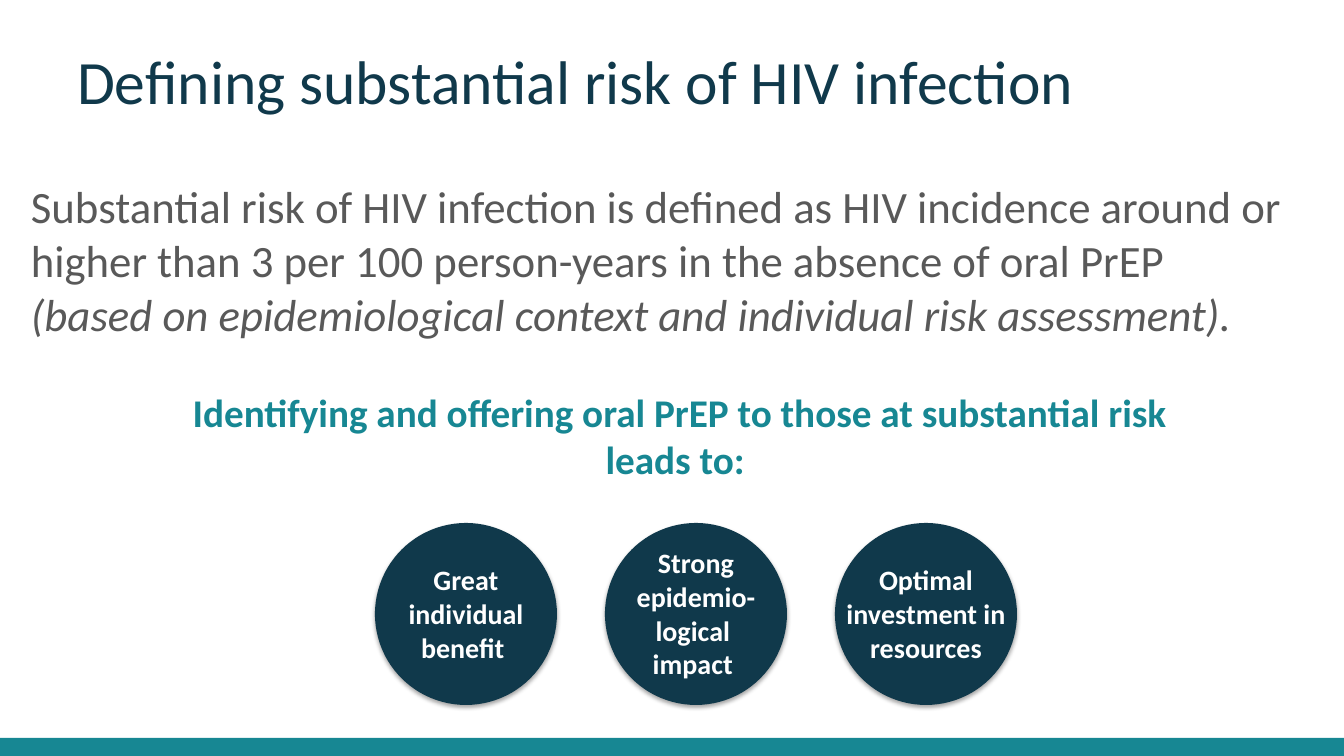
from pptx import Presentation
from pptx.dml.color import RGBColor
from pptx.enum.shapes import MSO_SHAPE
from pptx.enum.text import MSO_ANCHOR, MSO_AUTO_SIZE, PP_ALIGN
from pptx.oxml import parse_xml
from pptx.oxml.ns import nsdecls
from pptx.util import Pt

RECT, OVAL = MSO_SHAPE.RECTANGLE, MSO_SHAPE.OVAL
LEFT, CENTER = PP_ALIGN.LEFT, PP_ALIGN.CENTER
TOP, GROW, FIXED = MSO_ANCHOR.TOP, MSO_AUTO_SIZE.SHAPE_TO_FIT_TEXT, MSO_AUTO_SIZE.NONE

# Content
TITLE = "Defining substantial risk of HIV infection"
RISK = ("Substantial risk of HIV infection is defined as HIV incidence around or "
        "higher than 3 per 100 person-years in the absence of oral PrEP ")
BASIS = "(based on epidemiological context and individual risk assessment)."
LEAD = "Identifying and offering oral PrEP to those at substantial risk leads to: "
GAINS = [  # label, number of lines
    ("Great individual benefit ", 3),
    ("Strong epidemio-logical \vimpact ", 4),
    ("Optimal investment in resources", 3),
]

# Look, lengths in px
FONT = "Calibri"
NAVY, TEAL, GREY, WHITE = "10394B", "178793", "595959", "FFFFFF"
WIDE, HIGH = 1344, 756
BAR = 18
DISC, STEP, DISC_X, DISC_Y = 182, 230, 375, 523
LINE, PAD = 34, 10
SCALE = 914400 / 100.8


def px(n):
    return round(n * SCALE)


def box(*lengths):
    return [px(n) for n in lengths]


def color(code):
    return RGBColor.from_string(code)


def style(par, size, code, align, bold=False):
    par.alignment = align
    for run in par.runs:
        font = run.font
        font.name, font.size, font.bold = FONT, Pt(size), bold
        font.color.rgb = color(code)


def add_text(shapes, area, text, size, code, align, bold=False):
    frame = shapes.add_textbox(*box(*area)).text_frame
    frame.word_wrap = True
    frame.auto_size = GROW
    frame.text = text
    style(frame.paragraphs[0], size, code, align, bold)
    return frame.paragraphs[0]


def add_solid(shapes, kind, area, code):
    shape = shapes.add_shape(kind, *box(*area))
    shape.shadow.inherit = False
    shape.fill.solid()
    shape.fill.fore_color.rgb = color(code)
    shape.line.fill.background()
    return shape


def add_shade(shape):
    shade = parse_xml(
        f'<a:effectLst {nsdecls("a")}><a:outerShdw blurRad="{Pt(3.1)}" '
        f'dist="{Pt(1.8)}" dir="5400000" rotWithShape="0"><a:srgbClr val="000000">'
        '<a:alpha val="35000"/></a:srgbClr></a:outerShdw></a:effectLst>')
    effects = shape.element.spPr.find(shade.tag)
    effects.append(shade[0])


deck = Presentation()
deck.slide_width, deck.slide_height = px(WIDE), px(HIGH)
slide = deck.slides.add_slide(deck.slide_layouts[5])
shapes = slide.shapes

# Title
title = shapes.title
title.left, title.top, title.width, title.height = box(67, 49, 1210, 107)
frame = title.text_frame
frame.text = TITLE
frame.word_wrap = True
frame.auto_size = FIXED
frame.vertical_anchor = TOP
head = frame.paragraphs[0]
head.line_spacing = Pt(44.8)
style(head, 44, NAVY, LEFT)

# Bottom bar
add_solid(shapes, RECT, (0, HIGH - BAR, WIDE, BAR), TEAL)

# Definition and lead-in
par = add_text(shapes, (21, 174, 1275, 173), RISK, 32, GREY, LEFT)
par.add_run().text = BASIS
style(par, 32, GREY, LEFT)
par.runs[1].font.italic = True
add_text(shapes, (140, 383, 1079, 105), LEAD, 28, TEAL, CENTER, True)

# Discs with their labels
group = shapes.add_group_shape().shapes
for i, (label, lines) in enumerate(GAINS):
    x = DISC_X + i * STEP
    add_shade(add_solid(group, OVAL, (x, DISC_Y, DISC, DISC), NAVY))
    tall = lines * LINE + PAD
    y = DISC_Y + (DISC - tall) / 2
    add_text(group, (x, y, DISC, tall), label, 20, WHITE, CENTER, True)

deck.save("out.pptx")
